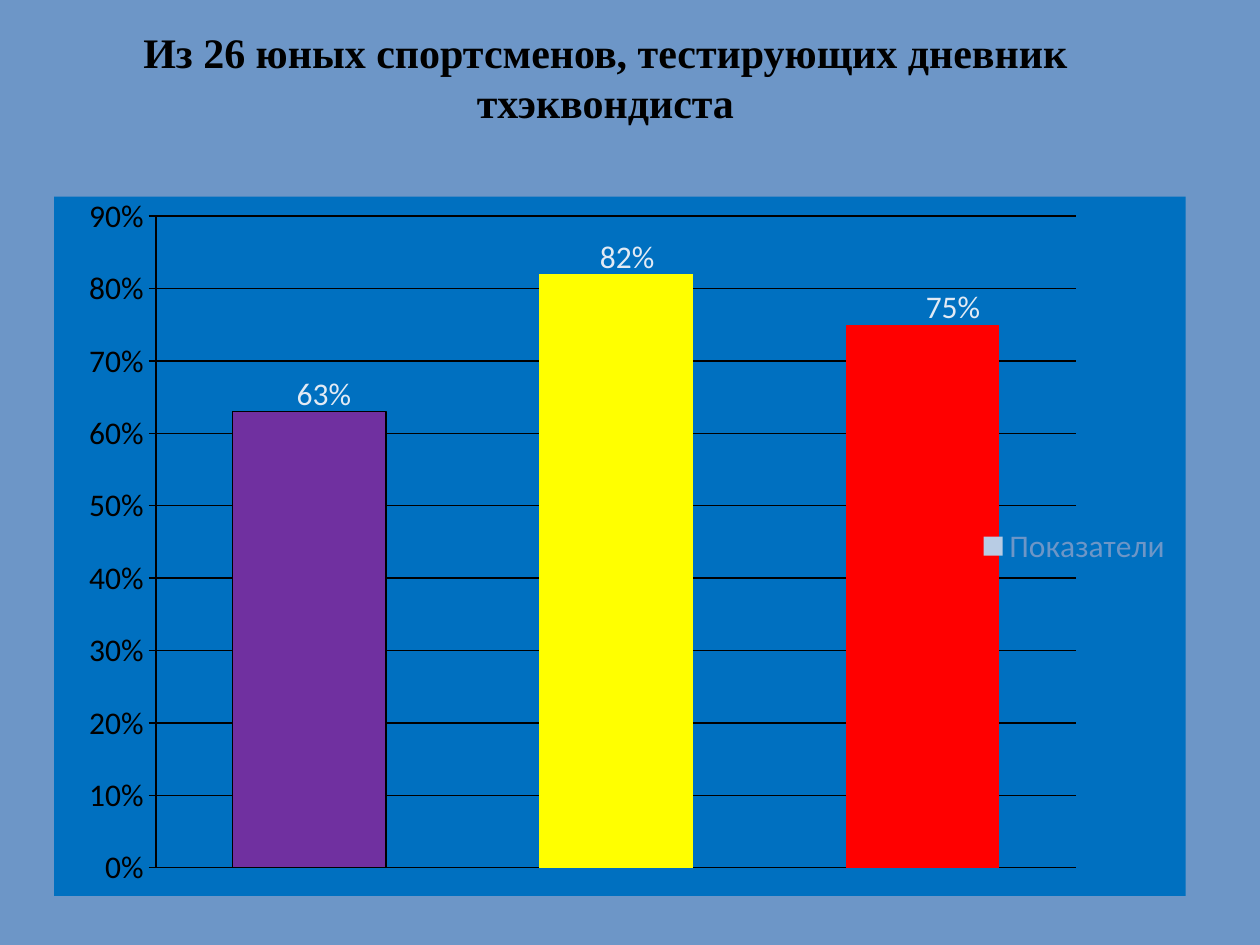
import pptx
import pptx.chart.data
import pptx.dml.color
import pptx.enum.chart
import pptx.enum.text
import pptx.oxml
import pptx.oxml.ns
import pptx.util

SIZE = (10, 7.5)
BACK = "6D96C7"
TITLE = "Из 26 юных спортсменов, тестирующих дневник тхэквондиста"
TITLE_BOX = (0.078, 0.021, 0.805, 0.121)  # shares of the slide
CHART_BOX = (0.043, 0.208, 0.898, 0.74)
PLOT = (0.09, 0.028, 0.813, 0.932)  # shares of the chart
SERIES = "Показатели"
# category, value, fill, outline, label shift (shares of the chart)
BARS = [
    ("1", 0.63, "7030A0", "000000", (0.013, 0.01)),
    ("2", 0.82, "FFFF00", None, (0.01, 0.01)),
    ("3", 0.75, "FF0000", None, (0.027, 0.01)),
]
PERCENT = "0%"
SPACE = pptx.oxml.ns.nsdecls("c", "a")


def color(code):
    return pptx.dml.color.RGBColor.from_string(code)


def paint(fill, code):
    fill.solid()
    fill.fore_color.rgb = color(code)


def style(font, size=18, code=BACK, face="Calibri", bold=False):
    font.size, font.name, font.bold = pptx.util.Pt(size), face, bold
    font.color.rgb = color(code)


def stroke(line, code, width=0.75):
    if code is None:
        line.fill.background()
    else:
        line.color.rgb = color(code)
        line.width = pptx.util.Pt(width)


def place(box):
    """Turn shares of the slide into lengths."""
    return [pptx.util.Inches(part * side) for part, side in zip(box, SIZE * 2)]


def layout(nums, inner=False):
    """Make a manual layout: x, y and, if given, w, h."""
    tags = "xywh"[:len(nums)]
    head = '<c:layoutTarget val="inner"/>' if inner else ""
    if inner:
        head += '<c:xMode val="edge"/><c:yMode val="edge"/>'
    body = "".join(f'<c:{tag} val="{num}"/>' for tag, num in zip(tags, nums))
    return pptx.oxml.parse_xml(
        f"<c:layout {SPACE}><c:manualLayout>{head}{body}"
        "</c:manualLayout></c:layout>")


def add_text(slide, text, box, **form):
    frame = slide.shapes.add_textbox(*place(box)).text_frame
    frame.word_wrap = True
    frame.auto_size = pptx.enum.text.MSO_AUTO_SIZE.SHAPE_TO_FIT_TEXT
    para = frame.paragraphs[0]
    para.alignment = pptx.enum.text.PP_ALIGN.CENTER
    run = para.add_run()
    run.text = text
    style(run.font, **form)


def add_bars(slide):
    data = pptx.chart.data.CategoryChartData(number_format=PERCENT)
    data.categories = [bar[0] for bar in BARS]
    data.add_series(SERIES, [bar[1] for bar in BARS])
    kind = pptx.enum.chart.XL_CHART_TYPE.COLUMN_CLUSTERED
    chart = slide.shapes.add_chart(kind, *place(CHART_BOX), data).chart
    style(chart.font)
    chart.has_title = False
    chart.has_legend = True
    chart.legend.position = pptx.enum.chart.XL_LEGEND_POSITION.RIGHT
    chart.legend.include_in_layout = False
    style(chart.legend.font)

    chart.category_axis.visible = False
    axis = chart.value_axis
    axis.minimum_scale, axis.maximum_scale, axis.major_unit = 0, 0.9, 0.1
    axis.major_tick_mark = pptx.enum.chart.XL_TICK_MARK.OUTSIDE
    axis.tick_labels.number_format = PERCENT
    axis.tick_labels.number_format_is_linked = False
    style(axis.tick_labels.font, code="000000")
    stroke(axis.format.line, "000000")
    stroke(axis.major_gridlines.format.line, "000000")

    plot = chart.plots[0]
    plot.gap_width, plot.vary_by_categories = 100, False
    series = plot.series[0]
    paint(series.format.fill, "B8CCE4")
    labels = series.data_labels
    labels.show_value = True
    labels.number_format, labels.number_format_is_linked = PERCENT, False
    style(labels.font, code="E2EAF4")
    for index, (_, _, fill, edge, shift) in enumerate(BARS):
        point = series.points[index]
        paint(point.format.fill, fill)
        stroke(point.format.line, edge)
        label = point.data_label
        style(label.font, code="E2EAF4")
        label.position = pptx.enum.chart.XL_LABEL_POSITION.OUTSIDE_END
        node = series._element.xpath(f"c:dLbls/c:dLbl[c:idx/@val={index}]")[0]
        node.insert(1, layout(shift))

    root = chart._chartSpace
    area = root.xpath("c:chart/c:plotArea")[0]
    for old in area.xpath("c:layout"):
        area.remove(old)
    area.insert(0, layout(PLOT, inner=True))
    root.xpath("c:chart")[0].addnext(pptx.oxml.parse_xml(
        f'<c:spPr {SPACE}><a:solidFill><a:srgbClr val="0070C0"/></a:solidFill>'
        "<a:ln><a:noFill/></a:ln></c:spPr>"))


def main():
    deck = pptx.Presentation()
    deck.slide_width, deck.slide_height = map(pptx.util.Inches, SIZE)
    slide = deck.slides.add_slide(deck.slide_layouts[6])
    paint(slide.background.fill, BACK)
    add_bars(slide)
    add_text(slide, TITLE, TITLE_BOX, size=24, code="000000",
             face="Times New Roman", bold=True)
    deck.save("out.pptx")


if __name__ == "__main__":
    main()
